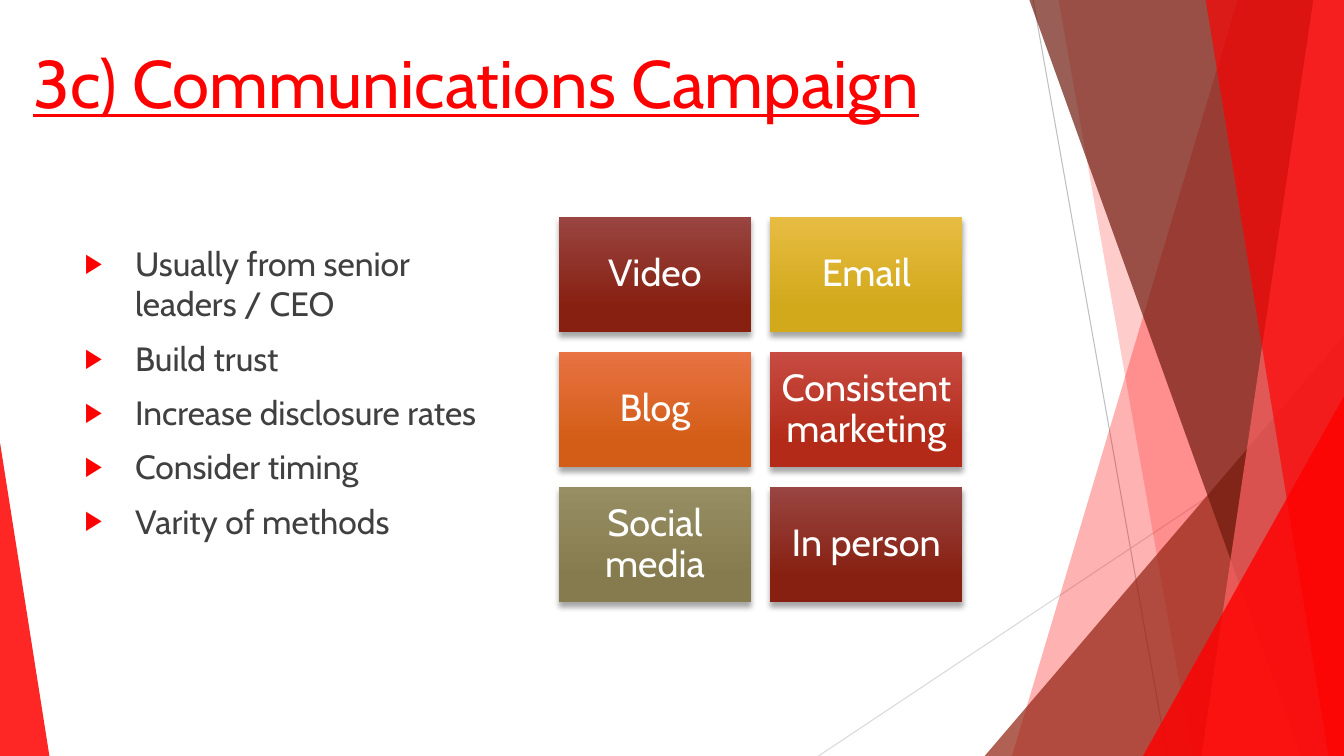
from typing import NamedTuple

from lxml.etree import SubElement
from pptx import Presentation
from pptx.dml.color import RGBColor
from pptx.enum.shapes import MSO_CONNECTOR, MSO_SHAPE
from pptx.enum.text import MSO_ANCHOR, MSO_AUTO_SIZE, PP_ALIGN
from pptx.oxml.ns import qn
from pptx.util import Pt

FONT = "Cabin"
W, H, TOP = 960, 540, -0.6
COLORS = {
    "red": "FF0000", "rose": "FF6666", "rust": "932313", "maroon": "6E1A0E",
    "text": "404040", "white": "FFFFFF", "black": "000000",
    "line_dark": "BFBFBF", "line_light": "D9D9D9",
}
GRADIENTS = {
    "brown": ("994541", "872011"), "gold": ("E7BC43", "D2A91B"),
    "orange": ("E87242", "D35D16"), "brick": ("C74B42", "B32B18"),
    "olive": ("988E64", "857B4E"),
}


class Ray(NamedTuple):
    x1: float
    y1: float
    x2: float
    y2: float
    color: str


class Band(NamedTuple):
    """Sloped left edge; the right edge is that of the slide."""
    top_x: float
    bottom_x: float
    color: str
    alpha: int


class Wedge(NamedTuple):
    """Triangle standing on the bottom edge of the slide."""
    x: float
    y: float
    w: float
    apex: int
    color: str
    alpha: int


class Tile(NamedTuple):
    label: str
    gradient: str


DECOR = [
    Ray(738, 0, 833.8, H, "line_dark"),
    Ray(W, 290.2, 584.6, H, "line_light"),
    Band(884.2, 722.9, "red", 30),
    Band(756, 851.8, "red", 20),
    Wedge(703.4, 239.8, 256.6, 1, "rust", 72),
    Band(735.1, 929.5, "maroon", 70),
    Band(938.2, 858.2, "rose", 70),
    Band(861.1, 949, "red", 65),
    Wedge(816.5, 283, 143.5, 1, "red", 80),
    Wedge(0, 316.1, 35.3, 0, "red", 85),
]
TILES = [
    Tile("Video", "brown"), Tile("Email", "gold"),
    Tile("Blog", "orange"), Tile("Consistent marketing", "brick"),
    Tile("Social media", "olive"), Tile("In person", "brown"),
]
TILE_X, TILE_Y, TILE_W, TILE_H, PITCH_X, PITCH_Y = 399, 155, 137.5, 82.5, 151, 96.4
BULLETS = [
    "Usually from senior leaders / CEO", "Build trust",
    "Increase disclosure rates", "Consider timing", "Varity of methods",
]


def rgb(name: str) -> RGBColor:
    return RGBColor.from_string(COLORS[name])


def write(p, text: str, *, size: float, color: str, underline: bool = False,
          align=PP_ALIGN.LEFT, spacing: float = 1.0, before: float = 0) -> None:
    p.alignment, p.line_spacing, p.space_before = align, spacing, Pt(before)
    r = p.add_run()
    r.text = text
    f = r.font
    f.name, f.size, f.underline = FONT, Pt(size), underline
    f.color.rgb = rgb(color)


def place(sp, x: float, y: float, w: float, h: float):
    """Position a placeholder and bring it to the front."""
    sp.left, sp.top, sp.width, sp.height = Pt(x), Pt(y), Pt(w), Pt(h)
    sp.element.getparent().append(sp.element)
    tf = sp.text_frame
    tf.word_wrap, tf.auto_size = True, MSO_AUTO_SIZE.NONE
    tf.vertical_anchor = MSO_ANCHOR.TOP
    return tf


def tint(sp, color: str, alpha: int) -> None:
    sp.shadow.inherit = False
    sp.line.fill.background()
    sp.fill.solid()
    sp.fill.fore_color.rgb = rgb(color)
    clr = sp.element.spPr.find(".//" + qn("a:srgbClr"))
    SubElement(clr, qn("a:alpha"), val=str(alpha * 1000))


def draw_ray(shapes, ray: Ray) -> None:
    ends = [Pt(v) for v in ray[:4]]
    line = shapes.add_connector(MSO_CONNECTOR.STRAIGHT, *ends)
    line.line.color.rgb = rgb(ray.color)
    line.line.width = Pt(0.75)
    SubElement(line.element.spPr, qn("a:effectLst"))


def draw_band(shapes, band: Band) -> None:
    fb = shapes.build_freeform(Pt(band.top_x), Pt(TOP), scale=1.0)
    corners = [(W, TOP), (W, H), (band.bottom_x, H)]
    fb.add_line_segments([(Pt(x), Pt(y)) for x, y in corners], close=True)
    tint(fb.convert_to_shape(), band.color, band.alpha)


def draw_wedge(shapes, wedge: Wedge) -> None:
    sp = shapes.add_shape(MSO_SHAPE.ISOSCELES_TRIANGLE, Pt(wedge.x), Pt(wedge.y),
                          Pt(wedge.w), Pt(H - wedge.y))
    sp.adjustments[0] = wedge.apex
    tint(sp, wedge.color, wedge.alpha)


def draw_tile(shapes, tile: Tile, index: int) -> None:
    row, col = divmod(index, 2)
    sp = shapes.add_shape(MSO_SHAPE.RECTANGLE, Pt(TILE_X + col * PITCH_X),
                          Pt(TILE_Y + row * PITCH_Y), Pt(TILE_W), Pt(TILE_H))
    sp.line.fill.background()
    sp.fill.gradient()
    sp.fill.gradient_angle = 270
    for stop, color, pos in zip(sp.fill.gradient_stops, GRADIENTS[tile.gradient], (0, 0.78)):
        stop.color.rgb, stop.position = RGBColor.from_string(color), pos
    # Soft shadow straight below
    sp.shadow.inherit = False
    effects = sp.element.spPr.find(qn("a:effectLst"))
    shadow = SubElement(effects, qn("a:outerShdw"), blurRad=str(Pt(4)), dist=str(Pt(3)),
                        dir="5400000", algn="ctr", rotWithShape="0")
    clr = SubElement(shadow, qn("a:srgbClr"), val=COLORS["black"])
    SubElement(clr, qn("a:alpha"), val="35000")
    # Label
    tf = sp.text_frame
    tf.word_wrap, tf.vertical_anchor = True, MSO_ANCHOR.MIDDLE
    write(tf.paragraphs[0], tile.label, size=27, color="white",
          align=PP_ALIGN.CENTER, spacing=0.9)


def add_bullet(p) -> None:
    pPr = p._p.get_or_add_pPr()
    pPr.set("marL", str(Pt(36)))
    pPr.set("indent", str(Pt(-36)))
    SubElement(SubElement(pPr, qn("a:buClr")), qn("a:srgbClr"), val=COLORS["red"])
    SubElement(pPr, qn("a:buSzPct"), val="80000")
    SubElement(pPr, qn("a:buChar"), char="▶")


def main() -> None:
    prs = Presentation()
    prs.slide_width, prs.slide_height = Pt(W), Pt(H)
    slide = prs.slides.add_slide(prs.slide_layouts[1])
    shapes = slide.shapes
    title, body = shapes.title, slide.placeholders[1]

    # Background facets
    painters = {Ray: draw_ray, Band: draw_band, Wedge: draw_wedge}
    for part in DECOR:
        painters[type(part)](shapes, part)

    # Title
    tf = place(title, 16.6, 25.9, 845.3, 87.1)
    write(tf.paragraphs[0], "3c) Communications Campaign", size=48, color="red",
          underline=True)

    # Channel tiles
    for i, tile in enumerate(TILES):
        draw_tile(shapes, tile, i)

    # Bullet list
    tf = place(body, 53.3, 169.9, 303.1, 300.2)
    for i, text in enumerate(BULLETS):
        p = tf.add_paragraph() if i else tf.paragraphs[0]
        write(p, text, size=24, color="text", before=10)
        add_bullet(p)

    prs.save("out.pptx")


if __name__ == "__main__":
    main()
